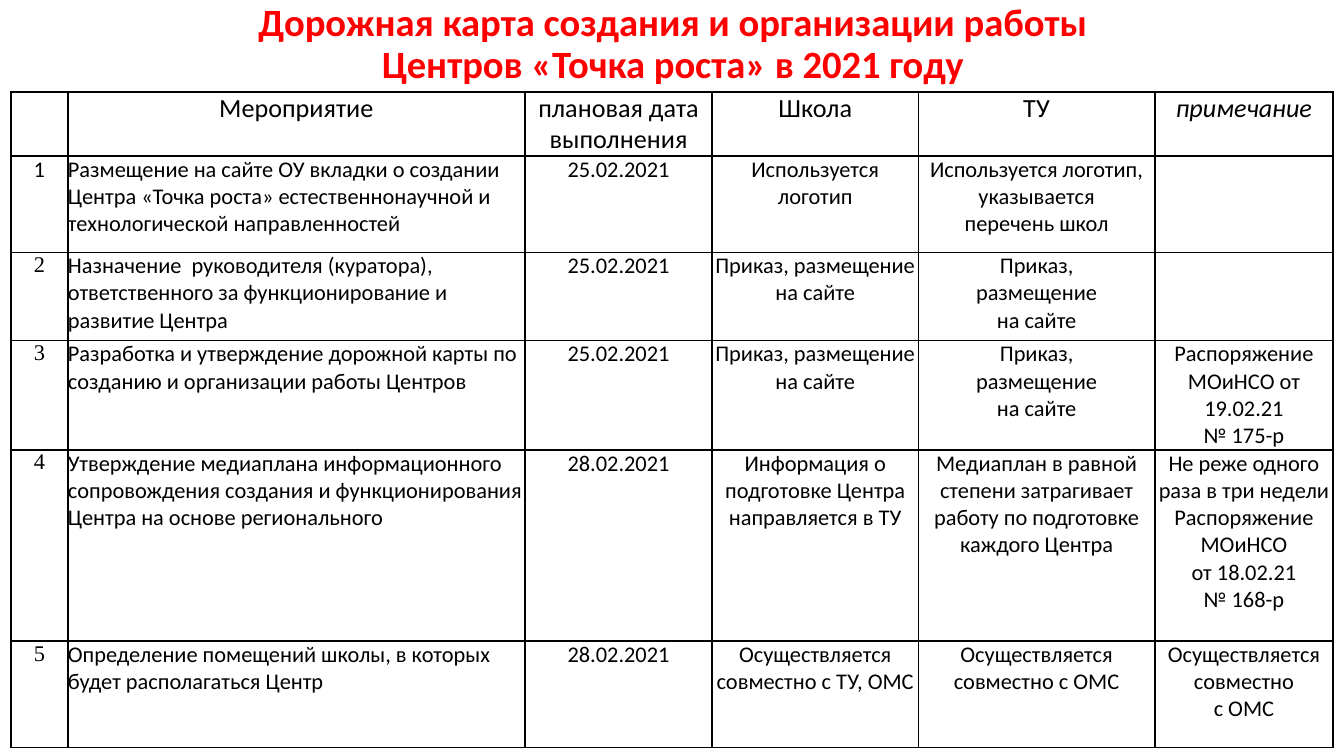
from dataclasses import dataclass

from lxml import etree
from pptx import Presentation
from pptx.dml.color import RGBColor
from pptx.enum.text import MSO_ANCHOR, PP_ALIGN
from pptx.oxml.ns import qn
from pptx.util import Pt

CENTER = PP_ALIGN.CENTER
LEFT = PP_ALIGN.LEFT
MIDDLE = MSO_ANCHOR.MIDDLE
TOP = MSO_ANCHOR.TOP

BLACK = "000000"
WHITE = "FFFFFF"
RED = "FF0000"
BODY_FONT = "Calibri"
NUMBER_FONT = "Times New Roman"
COLUMN_WIDTHS = (30.6, 244.8, 100.4, 110.4, 126.8, 95.4)
ACTIVITY_COLUMN = 1


@dataclass(frozen=True)
class Row:
    height: float
    texts: tuple[str, ...]
    size: float = 12
    number_font: str = NUMBER_FONT


HEADER = Row(34.2, ("", "Мероприятие", "плановая дата выполнения", "Школа", "ТУ", "примечание"), size=14)
STEPS = (
    Row(51.6, (
        "1",
        "Размещение на сайте ОУ вкладки о создании Центра «Точка роста» "
        "естественнонаучной и технологической направленностей",
        "25.02.2021",
        "Используется логотип",
        "Используется логотип,\nуказывается\nперечень школ",
        "",
    ), number_font=BODY_FONT),
    Row(47.2, (
        "2",
        "Назначение  руководителя (куратора), ответственного за функционирование и развитие Центра",
        "25.02.2021",
        "Приказ, размещение на сайте",
        "Приказ,\nразмещение\nна сайте",
        "",
    )),
    Row(58.6, (
        "3",
        "Разработка и утверждение дорожной карты по созданию и организации работы Центров",
        "25.02.2021",
        "Приказ, размещение на сайте",
        "Приказ,\nразмещение\nна сайте",
        "Распоряжение МОиНСО от 19.02.21\n№ 175-р",
    )),
    Row(102.5, (
        "4",
        "Утверждение медиаплана информационного сопровождения создания "
        "и функционирования Центра на основе регионального",
        "28.02.2021",
        "Информация о подготовке Центра направляется в ТУ",
        "Медиаплан в равной степени затрагивает работу по подготовке каждого Центра",
        "Не реже одного раза в три недели\nРаспоряжение МОиНСО\nот 18.02.21\n№ 168-р",
    )),
    Row(57, (
        "5",
        "Определение помещений школы, в которых будет располагаться Центр",
        "28.02.2021",
        "Осуществляется совместно с ТУ, ОМС",
        "Осуществляется совместно с ОМС",
        "Осуществляется совместно\nс ОМС",
    )),
)


def rgb(color: str) -> RGBColor:
    return RGBColor.from_string(color)


def write_text(holder, text: str, *, size: float, font: str = BODY_FONT, color: str = BLACK,
               bold: bool = False, italic: bool = False, align=CENTER, anchor=TOP,
               line_spacing: float = 1.0) -> None:
    holder.margin_left = holder.margin_right = Pt(0)
    holder.margin_top = holder.margin_bottom = Pt(0)
    holder.vertical_anchor = anchor
    frame = getattr(holder, "text_frame", holder)
    frame.word_wrap = True
    frame.text = text
    for paragraph in frame.paragraphs:
        paragraph.alignment = align
        paragraph.line_spacing = line_spacing
        paragraph.font.size = Pt(size)
        for run in paragraph.runs:
            run.font.name = font
            run.font.size = Pt(size)
            run.font.bold = bold
            run.font.italic = italic
            run.font.color.rgb = rgb(color)


def style_cell(cell, border_width: float = 1) -> None:
    properties = cell._tc.get_or_add_tcPr()
    for side in ("a:lnL", "a:lnR", "a:lnT", "a:lnB"):
        line = etree.SubElement(properties, qn(side), w=str(Pt(border_width)))
        fill = etree.SubElement(line, qn("a:solidFill"))
        etree.SubElement(fill, qn("a:srgbClr"), val=BLACK)
    cell.fill.solid()
    cell.fill.fore_color.rgb = rgb(WHITE)


def add_title(slide) -> None:
    title = slide.shapes.add_textbox(Pt(20.2), Pt(4.3), Pt(680.4), Pt(39.6))
    write_text(title.text_frame,
               "Дорожная карта создания и организации работы\vЦентров «Точка роста» в 2021 году",
               size=20.7, color=RED, bold=True, anchor=MIDDLE, line_spacing=0.9)


def add_roadmap(slide, rows: tuple[Row, ...]) -> None:
    frame = slide.shapes.add_table(len(rows), len(COLUMN_WIDTHS), Pt(5.8), Pt(49.4),
                                   Pt(sum(COLUMN_WIDTHS)), Pt(sum(row.height for row in rows)))
    table = frame.table
    for column, width in zip(table.columns, COLUMN_WIDTHS):
        column.width = Pt(width)
    for row_index, row in enumerate(rows):
        table.rows[row_index].height = Pt(row.height)
        is_header = row is HEADER
        for column_index, text in enumerate(row.texts):
            cell = table.cell(row_index, column_index)
            style_cell(cell)
            write_text(cell, text, size=row.size,
                       font=row.number_font if column_index == 0 else BODY_FONT,
                       italic=is_header and column_index == len(row.texts) - 1,
                       align=LEFT if column_index == ACTIVITY_COLUMN and not is_header else CENTER)


def main() -> None:
    presentation = Presentation()
    presentation.slide_width = Pt(720)
    presentation.slide_height = Pt(405)
    slide = presentation.slides.add_slide(presentation.slide_layouts[6])
    add_title(slide)
    add_roadmap(slide, (HEADER, *STEPS))
    presentation.save("out.pptx")


if __name__ == "__main__":
    main()
